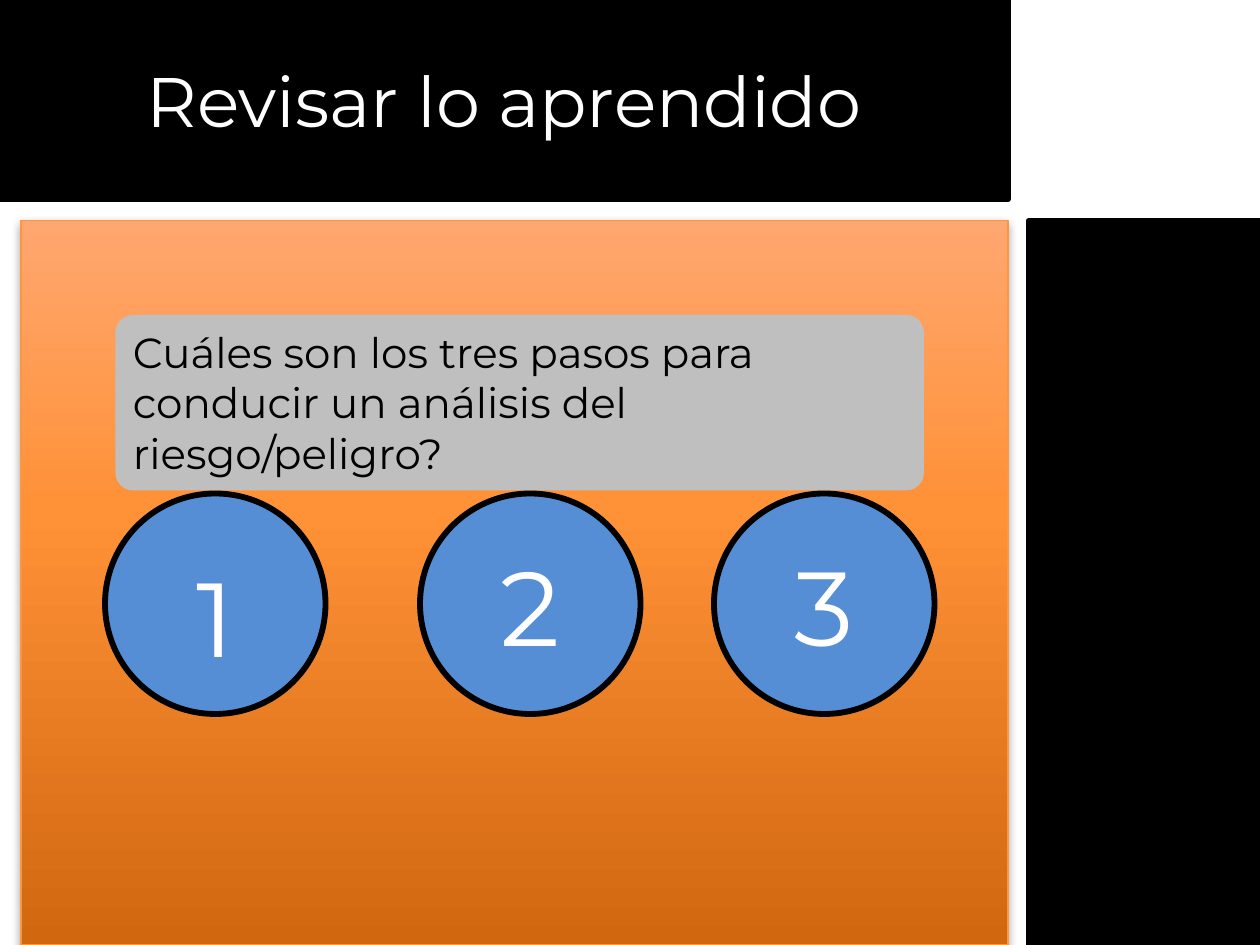
from lxml import etree
from pptx import Presentation
from pptx.dml.color import RGBColor
from pptx.enum.shapes import MSO_SHAPE
from pptx.enum.text import MSO_ANCHOR, MSO_AUTO_SIZE, PP_ALIGN
from pptx.oxml.ns import qn
from pptx.util import Inches, Pt

RECTANGLE, ROUNDED, OVAL = MSO_SHAPE.RECTANGLE, MSO_SHAPE.ROUNDED_RECTANGLE, MSO_SHAPE.OVAL
LEFT, CENTER = PP_ALIGN.LEFT, PP_ALIGN.CENTER
TOP, MIDDLE = MSO_ANCHOR.TOP, MSO_ANCHOR.MIDDLE
GROW, FIXED = MSO_AUTO_SIZE.SHAPE_TO_FIT_TEXT, MSO_AUTO_SIZE.NONE

BLACK = RGBColor(0x00, 0x00, 0x00)
WHITE = RGBColor(0xFF, 0xFF, 0xFF)
GRAY = RGBColor(0xBF, 0xBF, 0xBF)
BLUE = RGBColor(0x55, 0x8E, 0xD5)
ORANGE_EDGE = RGBColor(0xFF, 0x95, 0x3E)
DARK_ORANGE = RGBColor(0xD1, 0x67, 0x0F)
ORANGE = RGBColor(0xFF, 0x91, 0x37)
LIGHT_ORANGE = RGBColor(0xFF, 0xA7, 0x70)

CELLS_PER_INCH = 12  # the slide is a grid of 120 columns by 90 rows


def add_color(parent, color):
    return etree.SubElement(parent, qn("a:srgbClr"), val=str(color))


class SlideBuilder:
    font_name = "Montserrat"
    heavy_line = 3.35

    def __init__(self, slide):
        self.slide = slide

    def place(self, cells):
        return [Inches(cell / CELLS_PER_INCH) for cell in cells]

    def shape(self, kind, cells, fill, line=None, width=heavy_line):
        shape = self.slide.shapes.add_shape(kind, *self.place(cells))
        shape.shadow.inherit = False
        shape.fill.solid()
        shape.fill.fore_color.rgb = fill
        if line is None:
            shape.line.fill.background()
        else:
            shape.line.color.rgb = line
            shape.line.width = Pt(width)
        return shape

    def gradient_panel(self, cells, stops, line):
        panel = self.shape(RECTANGLE, cells, ORANGE, line, 0.75)
        panel.fill.gradient()
        panel.fill.gradient_angle = 90
        properties = panel.element.spPr

        # Three colour stops, from bottom to top
        stop_list = properties.find(".//" + qn("a:gsLst"))
        for stop in list(stop_list):
            stop_list.remove(stop)
        for percent, color in stops:
            add_color(etree.SubElement(stop_list, qn("a:gs"), pos=str(percent * 1000)), color)

        # Soft shadow below the panel
        shadow = etree.SubElement(
            properties.find(qn("a:effectLst")), qn("a:outerShdw"),
            blurRad=str(Pt(5.2)), dist=str(Pt(3)), dir="5400000", rotWithShape="0")
        etree.SubElement(add_color(shadow, BLACK), qn("a:alpha"), val="40000")

    def set_text(self, box, text, size, color, align=LEFT, anchor=TOP, fit=GROW):
        frame = box.text_frame
        frame.word_wrap = True
        frame.auto_size = fit
        frame.vertical_anchor = anchor
        para = frame.paragraphs[0]
        para.alignment = align
        span = para.add_run()
        span.text = text
        span.font.name = self.font_name
        span.font.size = Pt(size)
        span.font.color.rgb = color

    def title(self, text, cells):
        box = self.slide.shapes.title
        box.left, box.top, box.width, box.height = self.place(cells)
        self.set_text(box, text, 40, WHITE, CENTER, MIDDLE, FIXED)
        # Bring the title in front of the header bar
        box.element.getparent().append(box.element)

    def question(self, text, cells):
        box = self.shape(ROUNDED, cells, GRAY)
        box.adjustments[0] = 0.1
        self.set_text(box, text, 24, BLACK)

    def number(self, text, cells):
        box = self.slide.shapes.add_textbox(*self.place(cells))
        self.set_text(box, text, 60, WHITE, CENTER)


def main():
    deck = Presentation()
    deck.slide_width, deck.slide_height = Inches(10), Inches(7.5)
    page = SlideBuilder(deck.slides.add_slide(deck.slide_layouts[5]))

    # Background panels
    page.gradient_panel((2, 21, 94, 69),
                        [(0, DARK_ORANGE), (60, ORANGE), (100, LIGHT_ORANGE)], ORANGE_EDGE)
    page.shape(RECTANGLE, (0, 0, 96, 19), BLACK, BLACK)
    page.shape(RECTANGLE, (98, 21, 22, 69), BLACK, BLACK)

    # Title and question
    page.title("Revisar lo aprendido", (0, 2, 96, 15))
    page.question("Cuáles son los tres pasos para conducir un análisis del riesgo/peligro?",
                  (11, 30, 77, 16.7))

    # Three numbered circles; the first number sits one row lower
    steps = [("1", 10, 52), ("2", 40, 51), ("3", 68, 51)]
    for _, column, _ in steps:
        page.shape(OVAL, (column, 47, 21, 21), BLUE, BLACK)
    for label, column, row in steps:
        page.number(label, (column + 3, row, 15, 13.3))

    deck.save("out.pptx")


if __name__ == "__main__":
    main()
